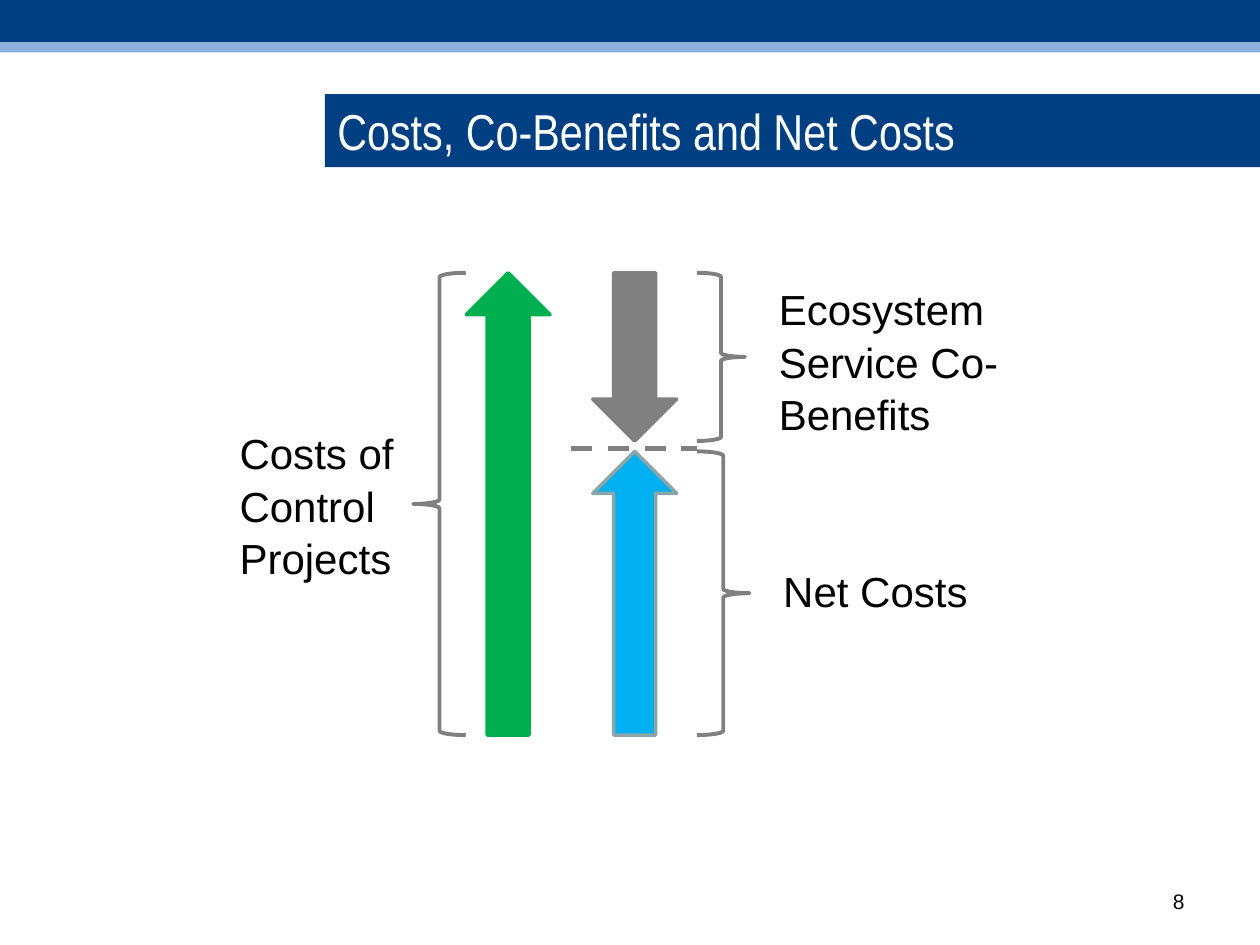
import pptx
import pptx.util
import pptx.dml.color
import pptx.enum.dml
import pptx.enum.shapes
import pptx.enum.text
import pptx.oxml.ns
import lxml.etree

Cm, Pt = pptx.util.Cm, pptx.util.Pt
SHAPE = pptx.enum.shapes.MSO_SHAPE
ANCHOR = pptx.enum.text.MSO_ANCHOR
ALIGN = pptx.enum.text.PP_ALIGN

COLORS = {
    "navy": "003F82",
    "pale_blue": "8EB0DD",
    "grey": "808080",
    "sky": "00B0F0",
    "sky_edge": "8AA6A8",
    "green": "00B050",
    "white": "FFFFFF",
    "black": "000000",
}

# Shared levels of the diagram, in cm
TOP, BENEFIT_END, NET_START, BOTTOM = 5.5, 8.89, 9.1, 14.82
ARROW_WIDTH = 1.69


def color(name):
    return pptx.dml.color.RGBColor.from_string(COLORS[name])


def set_all(target, values):
    for name, value in values.items():
        setattr(target, name, value)


def add_figure(page, kind, left, top, width, height, fill=None, line=None, weight=2):
    figure = page.shapes.add_shape(kind, Cm(left), Cm(top), Cm(width), Cm(height))
    figure.shadow.inherit = False
    if fill:
        figure.fill.solid()
        figure.fill.fore_color.rgb = color(fill)
    else:
        figure.fill.background()
    if line:
        figure.line.color.rgb = color(line)
        figure.line.width = Pt(weight)
    else:
        figure.line.fill.background()
    return figure


def write(box, text, size, ink="black", font="Arial", frame=None, para=None):
    set_all(box.text_frame, {"word_wrap": True, **(frame or {})})
    paragraph = box.text_frame.paragraphs[0]
    set_all(paragraph, {"alignment": ALIGN.LEFT, **(para or {})})
    span = paragraph.add_run()
    span.text = text
    set_all(span.font, {"name": font, "size": Pt(size)})
    span.font.color.rgb = color(ink)


def add_label(page, text, left, top, width, height, size=24, frame=None, para=None):
    box = page.shapes.add_textbox(Cm(left), Cm(top), Cm(width), Cm(height))
    write(box, text, size, frame=frame, para=para or {"line_spacing": 1.04})


def add_dashed_line(page, left, right, level):
    line = page.shapes.add_connector(
        pptx.enum.shapes.MSO_CONNECTOR.STRAIGHT,
        Cm(left), Cm(level), Cm(right), Cm(level))
    line.line.color.rgb = color("grey")
    set_all(line.line, {"width": Pt(3),
                        "dash_style": pptx.enum.dml.MSO_LINE.DASH})
    lxml.etree.SubElement(line._element.spPr, pptx.oxml.ns.qn("a:effectLst"))


def main():
    deck = pptx.Presentation()
    set_all(deck, {"slide_width": Cm(25.4), "slide_height": Cm(19.05)})
    page = deck.slides.add_slide(deck.slide_layouts[6])

    # Header bands and title bar
    add_figure(page, SHAPE.RECTANGLE, 0, 0, 25.4, 0.85, "navy")
    add_figure(page, SHAPE.RECTANGLE, 0, 0.85, 25.4, 0.21, "pale_blue")
    title = add_figure(page, SHAPE.RECTANGLE, 6.55, 1.9, 18.85, 1.47, "navy")
    write(title, "Costs, Co-Benefits and Net Costs", 28.8, "white", "Arial Narrow",
          frame={"vertical_anchor": ANCHOR.MIDDLE})

    # Arrows: kind, left, top, bottom, fill, line
    for kind, left, top, bottom, fill, line in (
        (SHAPE.DOWN_ARROW, 11.95, TOP, BENEFIT_END, "grey", "grey"),
        (SHAPE.UP_ARROW, 11.95, NET_START, BOTTOM, "sky", "sky_edge"),
        (SHAPE.UP_ARROW, 9.4, TOP, BOTTOM, "green", "green"),
    ):
        add_figure(page, kind, left, top, ARROW_WIDTH, bottom - top, fill, line)
    add_dashed_line(page, 11.51, 14.05, 9.04)

    # Labels
    add_label(page, "Costs of Control Projects", 4.83, 8.46, 3.73, 3.33,
              frame={"margin_left": 0, "margin_right": 0})
    add_label(page, "Ecosystem Service Co-Benefits", 15.45, 5.56, 5.41, 3.33)
    add_label(page, "Net Costs", 15.54, 11.23, 4.37, 1.27)

    # Braces: kind, left, top, width, bottom
    for kind, left, top, width, bottom in (
        (SHAPE.LEFT_BRACE, 8.33, TOP, 1.06, BOTTOM),
        (SHAPE.RIGHT_BRACE, 14.05, TOP, 0.97, BENEFIT_END),
        (SHAPE.RIGHT_BRACE, 14.05, NET_START, 1.06, BOTTOM),
    ):
        add_figure(page, kind, left, top, width, bottom - top,
                   line="grey", weight=2.25)

    # Page number
    add_label(page, "8", 18.2, 17.65, 5.93, 1.02, size=12,
              frame={"vertical_anchor": ANCHOR.MIDDLE},
              para={"alignment": ALIGN.RIGHT})

    deck.save("out.pptx")


if __name__ == "__main__":
    main()
